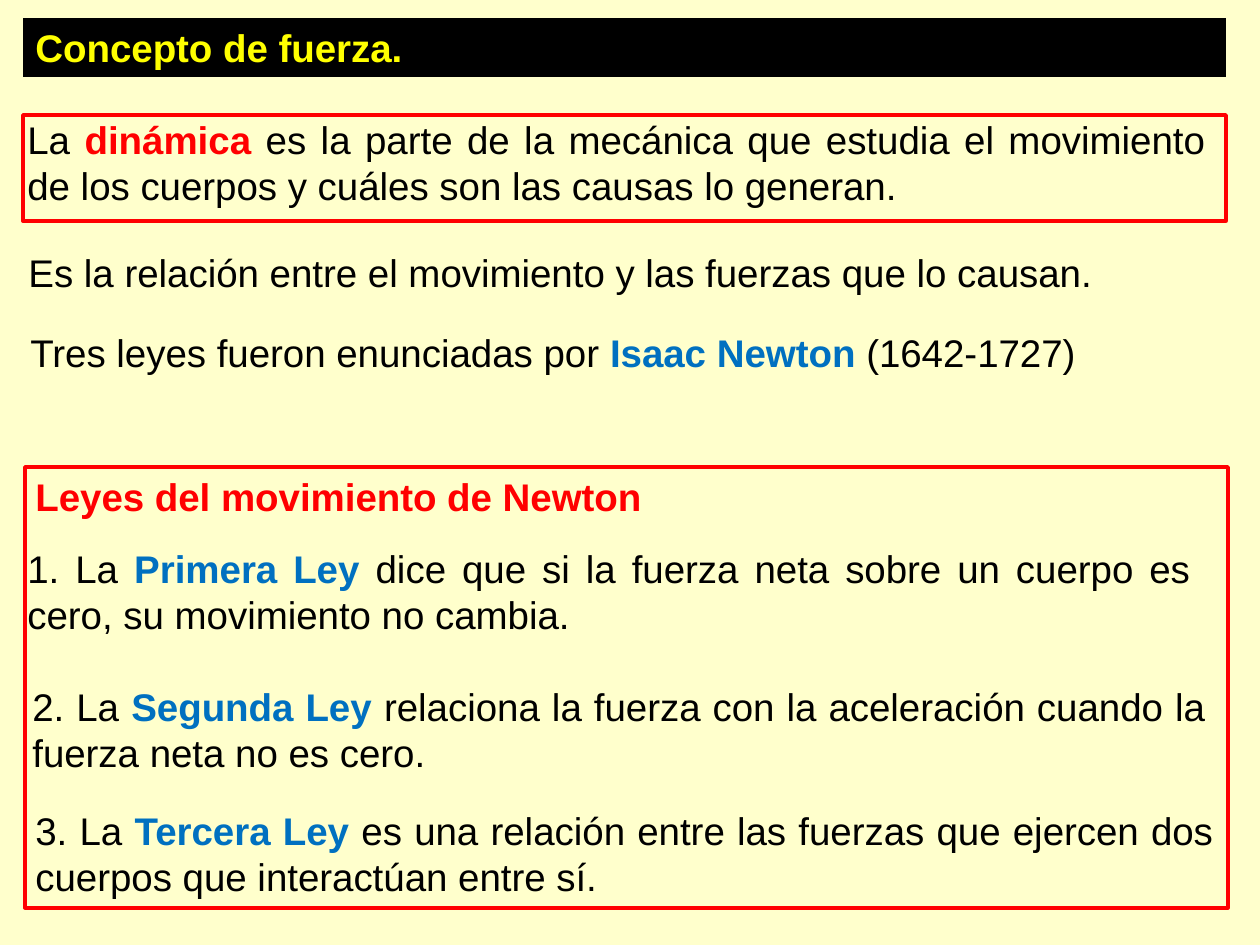
import pptx
import pptx.dml.color
import pptx.enum.shapes
import pptx.enum.text
import pptx.util

PX_PER_INCH = 126
BLACK, RED, BLUE, YELLOW, CREAM = "000000", "FF0000", "0070C0", "FFFF00", "FFFFCC"
ALIGN = pptx.enum.text.PP_ALIGN
ANCHOR = pptx.enum.text.MSO_ANCHOR
AUTO_SIZE = pptx.enum.text.MSO_AUTO_SIZE


def px(length):
    return pptx.util.Emu(round(length * 914400 / PX_PER_INCH))


def color(value):
    return pptx.dml.color.RGBColor.from_string(value)


def add_rectangle(page, box, fill=None, line=None):
    shape = page.shapes.add_shape(
        pptx.enum.shapes.MSO_SHAPE.RECTANGLE, *map(px, box))
    shape.shadow.inherit = False
    if fill:
        shape.fill.solid()
        shape.fill.fore_color.rgb = color(fill)
    else:
        shape.fill.background()
    if line:
        shape.line.color.rgb = color(line)
        shape.line.width = pptx.util.Pt(2)
    else:
        shape.line.fill.background()
    return shape


def write(shape, *spans, align=ALIGN.LEFT, anchor=ANCHOR.TOP, spacing=None, grow=True):
    frame = shape.text_frame
    frame.word_wrap = True
    frame.auto_size = AUTO_SIZE.SHAPE_TO_FIT_TEXT if grow else AUTO_SIZE.NONE
    frame.vertical_anchor = anchor
    para = frame.paragraphs[0]
    para.alignment = align
    if spacing:
        para.line_spacing = spacing
    for text, hue, bold in spans:
        span = para.add_run()
        span.text = text
        span.font.name = "Arial"
        span.font.size = pptx.util.Pt(22)
        span.font.bold = bold
        span.font.color.rgb = color(hue)


def add_text(page, box, *spans, **formats):
    write(page.shapes.add_textbox(*map(px, box)), *spans, **formats)


def highlighted(before, term, after, hue=BLUE):
    return (before, BLACK, False), (term, hue, True), (after, BLACK, False)


def add_header(page, box):
    bar = add_rectangle(page, box, fill=BLACK)
    write(bar, ("Concepto de fuerza.", YELLOW, True))


def add_definition(page, box):
    left, top, width, height = box
    add_text(page, (left - 8, top - 5, width, height),
             *highlighted("La ", "dinámica ",
                          "es la parte de la mecánica que estudia el movimiento "
                          "de los cuerpos y cuáles son las causas lo generan.", RED),
             align=ALIGN.JUSTIFY)
    add_rectangle(page, box, line=RED)


def add_background(page, box):
    left, top, width, height = box
    add_text(page, (left, top, width - 33, 74),
             ("Es la relación entre el movimiento y las fuerzas que lo causan.", BLACK, False),
             align=ALIGN.JUSTIFY, spacing=1.5)
    add_text(page, (left + 2, top + height - 59, width, 59),
             *highlighted("Tres leyes fueron enunciadas por ", "Isaac Newton ", "(1642-1727)"))


def add_laws(page, box):
    left, top, width, height = box
    add_text(page, (left - 2, top - 29, 1121, 117),
             ("Leyes del movimiento de Newton", RED, True),
             anchor=ANCHOR.MIDDLE, grow=False)
    laws = [
        (-10, 72, 1188, "1. La ", "Primera Ley ",
         "dice que si la fuerza neta sobre un cuerpo es cero, su movimiento no cambia."),
        (-5, 210, 1198, "2. La ", "Segunda Ley ",
         "relaciona la fuerza con la aceleración cuando la fuerza neta no es cero."),
        (-2, 334, 1203, "3. La ", "Tercera Ley ",
         "es una relación entre las fuerzas que ejercen dos cuerpos que interactúan entre sí."),
    ]
    for shift, drop, law_width, *parts in laws:
        add_text(page, (left + shift, top + drop, law_width, 106),
                 *highlighted(*parts), align=ALIGN.JUSTIFY)
    add_rectangle(page, box, line=RED)


def main():
    deck = pptx.Presentation()
    deck.slide_width, deck.slide_height = px(1260), px(945)
    page = deck.slides.add_slide(deck.slide_layouts[6])
    page.background.fill.solid()
    page.background.fill.fore_color.rgb = color(CREAM)
    add_header(page, (23, 18, 1203, 59))
    add_definition(page, (23, 115, 1203, 106))
    add_background(page, (16, 220, 1226, 162))
    add_laws(page, (25, 467, 1203, 441))
    deck.save("out.pptx")


if __name__ == "__main__":
    main()
